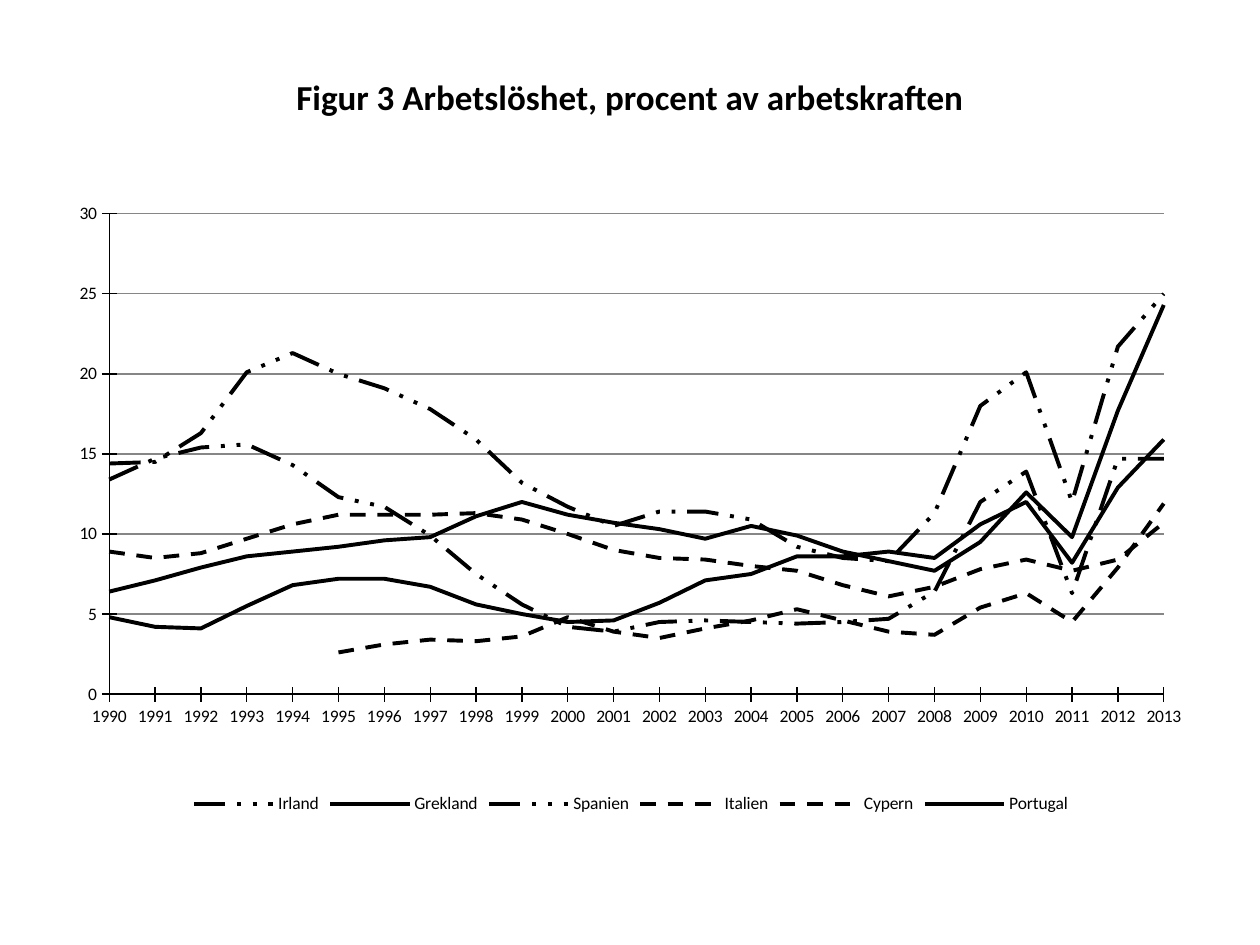
from lxml import etree
from pptx import Presentation
from pptx.chart.data import CategoryChartData
from pptx.dml.color import RGBColor
from pptx.enum.chart import XL_CHART_TYPE, XL_LEGEND_POSITION, XL_MARKER_STYLE, XL_TICK_MARK
from pptx.enum.dml import MSO_LINE
from pptx.enum.text import MSO_ANCHOR, PP_ALIGN
from pptx.util import Pt

BLACK = RGBColor(0x00, 0x00, 0x00)
GRID_GREY = RGBColor(0x86, 0x86, 0x86)
FONT = "Calibri"
LINE = XL_CHART_TYPE.LINE
BOTTOM = XL_LEGEND_POSITION.BOTTOM
NO_MARKER = XL_MARKER_STYLE.NONE
CROSS = XL_TICK_MARK.CROSS
NO_TICK = XL_TICK_MARK.NONE
SOLID, DASH, DASH_DOTS = MSO_LINE.SOLID, MSO_LINE.DASH, MSO_LINE.DASH_DOT_DOT
MIDDLE = MSO_ANCHOR.MIDDLE
CENTER = PP_ALIGN.CENTER
CHART_NS = "http://schemas.openxmlformats.org/drawingml/2006/chart"

YEARS = [str(year) for year in range(1990, 2014)]
UNEMPLOYMENT = [
    ("Irland", DASH_DOTS, [
        13.4, 14.7, 15.4, 15.6, 14.3, 12.3, 11.7, 9.9, 7.5, 5.6, 4.2, 3.9,
        4.5, 4.6, 4.5, 4.4, 4.5, 4.7, 6.4, 12, 13.9, 6.3, 14.7, 14.7]),
    ("Grekland", SOLID, [
        6.4, 7.1, 7.9, 8.6, 8.9, 9.2, 9.6, 9.8, 11.1, 12, 11.2, 10.7,
        10.3, 9.7, 10.5, 9.9, 8.9, 8.3, 7.7, 9.5, 12.6, 9.8, 17.7, 24.3]),
    ("Spanien", DASH_DOTS, [
        14.4, 14.5, 16.3, 20.1, 21.3, 20, 19.1, 17.8, 15.9, 13.2, 11.7, 10.5,
        11.4, 11.4, 10.9, 9.2, 8.5, 8.3, 11.3, 18, 20.1, 12, 21.7, 25]),
    ("Italien", DASH, [
        8.9, 8.5, 8.8, 9.7, 10.6, 11.2, 11.2, 11.2, 11.3, 10.9, 10, 9,
        8.5, 8.4, 8, 7.7, 6.8, 6.1, 6.7, 7.8, 8.4, 7.7, 8.4, 10.7]),
    ("Cypern", DASH, [None] * 5 + [
        2.6, 3.1, 3.4, 3.3, 3.6, 4.8, 3.9,
        3.5, 4.1, 4.6, 5.3, 4.6, 3.9, 3.7, 5.4, 6.3, 4.5, 7.9, 11.9]),
    ("Portugal", SOLID, [
        4.8, 4.2, 4.1, 5.5, 6.8, 7.2, 7.2, 6.7, 5.6, 5, 4.5, 4.6,
        5.7, 7.1, 7.5, 8.6, 8.6, 8.9, 8.5, 10.6, 12, 8.2, 12.9, 15.9]),
]


def style_font(font, size):
    """Apply the slide's typeface and colour at the given size."""
    font.name = FONT
    font.size = Pt(size)
    font.color.rgb = BLACK


def style_line(line, color, width):
    """Give a chart line its colour and width."""
    line.color.rgb = color
    line.width = Pt(width)


def place(sp, box):
    """Move a shape to a box of left, top, width and height."""
    sp.left, sp.top, sp.width, sp.height = (Pt(v) for v in box)


def add_title(s, box):
    """Fill the title placeholder, set slightly above its middle."""
    sp = s.shapes.title
    place(sp, box)
    tf = sp.text_frame
    tf.word_wrap = True
    tf.vertical_anchor = MIDDLE
    tf.margin_bottom = Pt(27)
    p = tf.paragraphs[0]
    p.alignment = CENTER
    r = p.add_run()
    r.text = "Figur 3 Arbetslöshet, procent av arbetskraften"
    style_font(r.font, 20)
    r.font.bold = True


def set_plot_layout(chart, x, y, w, h):
    """Fix the inner plot area as fractions of the chart."""
    plot_area = chart.plots[0]._element.getparent()
    for old in plot_area.findall(f"{{{CHART_NS}}}layout"):
        plot_area.remove(old)
    layout = etree.Element(f"{{{CHART_NS}}}layout")
    manual = etree.SubElement(layout, f"{{{CHART_NS}}}manualLayout")
    settings = [("layoutTarget", "inner"), ("xMode", "edge"), ("yMode", "edge"),
                ("x", x), ("y", y), ("w", w), ("h", h)]
    for name, value in settings:
        etree.SubElement(manual, f"{{{CHART_NS}}}{name}").set("val", str(value))
    plot_area.insert(0, layout)


def format_axes(chart):
    """Scale and draw both axes, with the lines starting on the value axis."""
    for axis in (chart.category_axis, chart.value_axis):
        axis.major_tick_mark = CROSS
        axis.minor_tick_mark = NO_TICK
        style_line(axis.format.line, BLACK, 0.75)
        style_font(axis.tick_labels.font, 10)
    values = chart.value_axis
    values.minimum_scale, values.maximum_scale, values.major_unit = 0, 30, 5
    values.has_major_gridlines = True
    style_line(values.major_gridlines.format.line, GRID_GREY, 0.75)
    chart.category_axis.has_major_gridlines = False
    val_ax = values._element
    cross = val_ax.find(f"{{{CHART_NS}}}crossBetween")
    if cross is None:
        cross = etree.Element(f"{{{CHART_NS}}}crossBetween")
        val_ax.find(f"{{{CHART_NS}}}crosses").addnext(cross)
    cross.set("val", "midCat")


def add_unemployment_chart(s, box):
    """Draw the line chart of unemployment by country."""
    data = CategoryChartData()
    data.categories = YEARS
    for name, _, values in UNEMPLOYMENT:
        data.add_series(name, values)
    chart = s.shapes.add_chart(LINE, *(Pt(v) for v in box), data).chart
    chart.has_title = False
    style_font(chart.font, 10)
    chart.has_legend = True
    chart.legend.position = BOTTOM
    chart.legend.include_in_layout = False
    style_font(chart.legend.font, 10)
    plot = chart.plots[0]
    plot.vary_by_categories = False
    for series, (_, dash, _) in zip(plot.series, UNEMPLOYMENT):
        series.smooth = False
        series.marker.style = NO_MARKER
        style_line(series.format.line, BLACK, 2.25)
        series.format.line.dash_style = dash
    format_axes(chart)
    set_plot_layout(chart, 0.04, 0.03, 0.93, 0.77)


def main():
    """Build and save the slide."""
    prs = Presentation()
    prs.slide_width, prs.slide_height = Pt(720), Pt(540)
    s = prs.slides.add_slide(prs.slide_layouts[5])
    add_title(s, (36, 21.6, 648, 90))
    add_unemployment_chart(s, (36.5, 111.5, 648, 356.5))
    prs.save("out.pptx")


if __name__ == "__main__":
    main()
